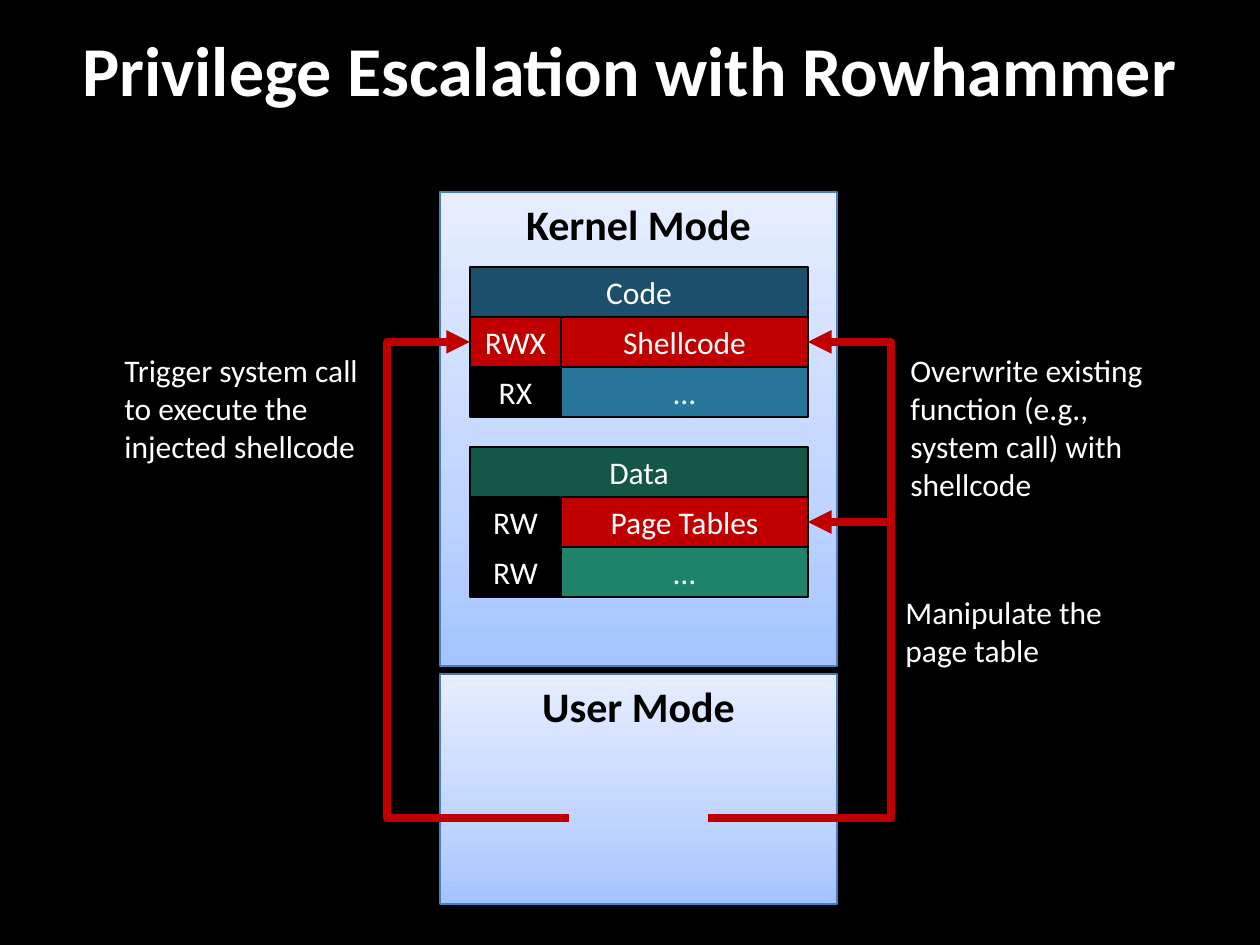
from copy import deepcopy

from lxml.etree import SubElement
from pptx import Presentation
from pptx.dml.color import RGBColor
from pptx.enum.shapes import MSO_CONNECTOR, MSO_SHAPE
from pptx.enum.text import MSO_ANCHOR, PP_ALIGN
from pptx.oxml.ns import qn
from pptx.util import Pt

SCALE = 914400 / 126
COLORS = {
    "black": "000000", "white": "FFFFFF", "red": "C00000", "border": "4B7EBC",
    "code": "1C4F69", "code_body": "29769D",
    "data": "155746", "data_body": "1F8369",
}
PANEL_STOPS = [(0, "A4C4FF"), (0.35, "BFD4FF"), (1, "E6EEFF")]
ROW = 50


def emu(*lengths):
    """Turn px lengths into EMU."""
    return [round(length * SCALE) for length in lengths]


def rgb(name):
    """Look up a named colour."""
    return RGBColor.from_string(COLORS[name])


def write(shape, words, size=18, color="white", bold=False, para_format=None, **frame_format):
    """Put one styled paragraph into a shape."""
    frame = shape.text_frame
    for key, value in {"word_wrap": True, "vertical_anchor": MSO_ANCHOR.TOP, **frame_format}.items():
        setattr(frame, key, value)
    para = frame.paragraphs[0]
    for key, value in (para_format or {"alignment": PP_ALIGN.CENTER}).items():
        setattr(para, key, value)
    span = para.add_run()
    span.text = words
    for key, value in {"name": "Calibri", "size": Pt(size), "bold": bold}.items():
        setattr(span.font, key, value)
    span.font.color.rgb = rgb(color)


def add_rectangle(page, box, border, width):
    """Add an outlined rectangle without a shadow."""
    shape = page.shapes.add_shape(MSO_SHAPE.RECTANGLE, *emu(*box))
    shape.shadow.inherit = False
    shape.line.color.rgb = rgb(border)
    shape.line.width = Pt(width)
    return shape


def add_title(page, box, words):
    """Add the slide title."""
    title = page.shapes.add_textbox(*emu(*box))
    write(title, words, 40, bold=True, vertical_anchor=MSO_ANCHOR.MIDDLE,
          para_format={"alignment": PP_ALIGN.CENTER, "line_spacing": 0.9})


def add_panel(page, box, heading):
    """Add a gradient panel for one processor mode."""
    panel = add_rectangle(page, box, "border", 0.75)
    panel.fill.gradient()
    panel.fill.gradient_angle = 90
    properties = panel._element.spPr
    stop_list = properties.find(f".//{qn('a:gsLst')}")
    stop_list.append(deepcopy(stop_list[0]))
    for stop, (position, color) in zip(panel.fill.gradient_stops, PANEL_STOPS):
        stop.position = position
        stop.color.rgb = RGBColor.from_string(color)
    shadow = SubElement(properties.find(qn("a:effectLst")), qn("a:outerShdw"),
                        blurRad="40000", dist="20000", dir="5400000", rotWithShape="0")
    shade = SubElement(shadow, qn("a:srgbClr"), val=COLORS["black"])
    SubElement(shade, qn("a:alpha"), val="38000")
    write(panel, heading, 24, "black", True)


def add_memory(page, box, heading, color, rows):
    """Add a memory region: a header row, then rows of permission and content."""
    left, top, width = box
    tag = 91
    cells = [(0, 0, width, heading, color)]
    for index, (permission, tag_color, content, content_color) in enumerate(rows, 1):
        cells += [(0, index, tag, permission, tag_color),
                  (tag, index, width - tag, content, content_color)]
    for x, row, cell_width, words, fill in cells:
        cell = add_rectangle(page, (left + x, top + row * ROW, cell_width, ROW), "black", 1.5)
        cell.fill.solid()
        cell.fill.fore_color.rgb = rgb(fill)
        write(cell, words)


def add_attack(page, start, end, lane, label_box, label):
    """Add a bent arrow running along a vertical lane, and its label."""
    arrow = page.shapes.add_connector(MSO_CONNECTOR.ELBOW, *emu(*start, *end))
    arrow.line.color.rgb = rgb("red")
    arrow.line.width = Pt(4.5)
    bend = round((lane - start[0]) / (end[0] - start[0]) * 100000)
    properties = arrow._element.spPr
    guides = properties.find(qn("a:prstGeom")).get_or_add_avLst()
    SubElement(guides, qn("a:gd"), name="adj1", fmla=f"val {bend}")
    SubElement(properties.find(qn("a:ln")), qn("a:tailEnd"), type="triangle")
    SubElement(properties, qn("a:effectLst"))
    note = page.shapes.add_textbox(*emu(*label_box))
    write(note, label, para_format={"alignment": PP_ALIGN.LEFT})


def main():
    """Build and save the slide."""
    deck = Presentation()
    deck.slide_width, deck.slide_height = emu(1260, 945)
    page = deck.slides.add_slide(deck.slide_layouts[6])
    page.background.fill.solid()
    page.background.fill.fore_color.rgb = rgb("black")

    add_title(page, (63, 21, 1133, 105), "Privilege Escalation with Rowhammer")
    add_panel(page, (440, 674, 397, 230), "User Mode")
    add_panel(page, (440, 192, 397, 474), "Kernel Mode")

    left, width, code_top, data_top = 470, 338, 267, 447
    add_memory(page, (left, code_top, width), "Code", "code",
               [("RWX", "red", "Shellcode", "red"), ("RX", "black", "...", "code_body")])
    add_memory(page, (left, data_top, width), "Data", "data",
               [("RW", "black", "Page Tables", "red"), ("RW", "black", "…", "data_body")])

    right, base = left + width, 818
    code_row, data_row = (top + ROW * 3 // 2 for top in (code_top, data_top))
    add_attack(page, (708, base), (right, data_row), 891,
               (893, 587, 282, 89), "Manipulate the page table")
    add_attack(page, (708, base), (right, code_row), 891, (898, 345, 282, 165),
               "Overwrite existing function (e.g., system call) with shellcode")
    add_attack(page, (569, base), (left, code_row), 387, (112, 345, 282, 127),
               "Trigger system call to execute the injected shellcode")
    deck.save("out.pptx")


if __name__ == "__main__":
    main()
